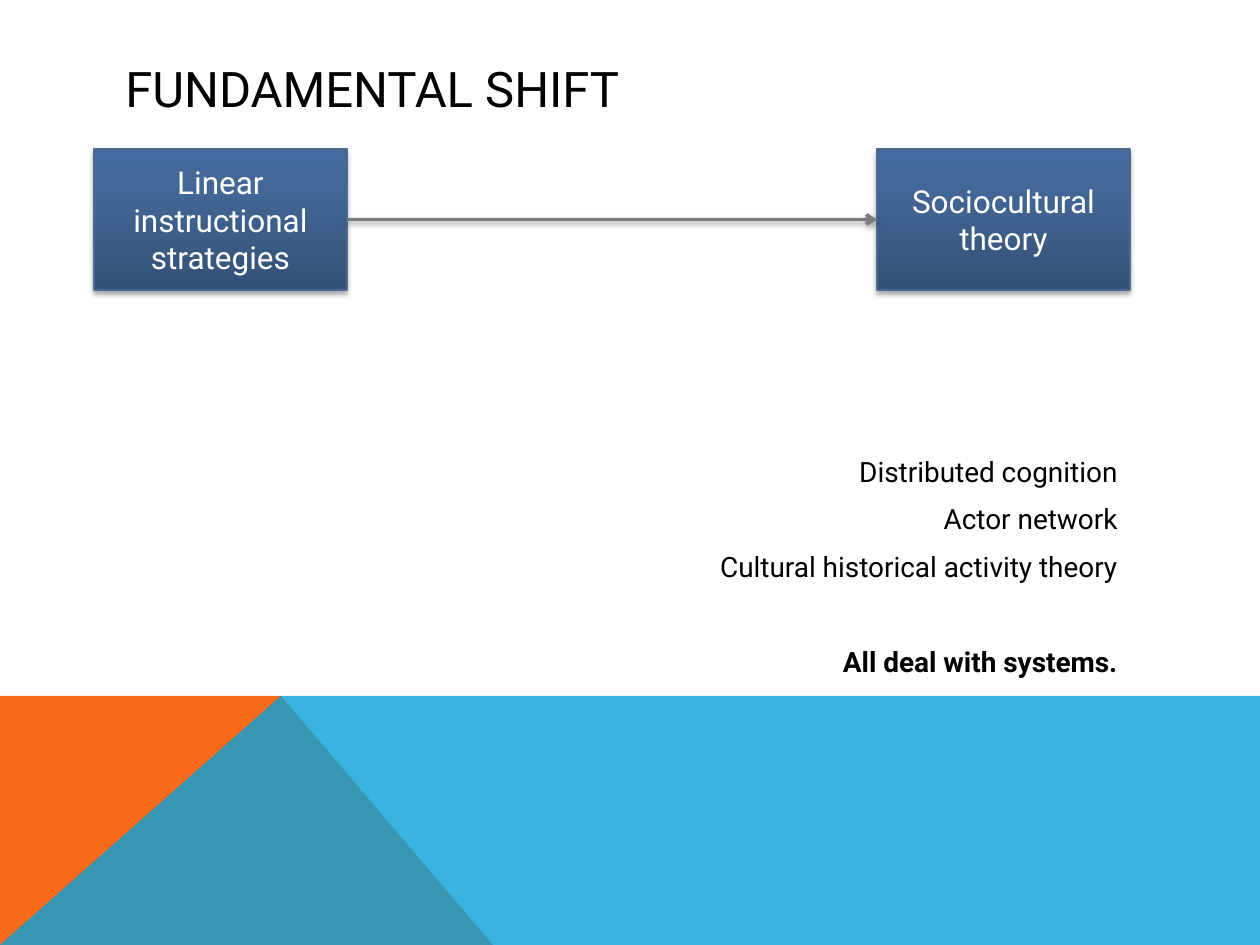
from lxml.etree import SubElement
from pptx import Presentation
from pptx.dml.color import RGBColor
from pptx.enum.shapes import MSO_CONNECTOR as Connector, MSO_SHAPE as Shape
from pptx.enum.text import MSO_ANCHOR as Anchor, PP_ALIGN as Align
from pptx.oxml.ns import qn
from pptx.util import Pt

SCALE = 914400 / 126
FONT = "Roboto"
GRADIENT = [(0, "345176"), (80, "446999"), (100, "426A9C")]


def px(length):
    """Turn whole pixels into EMU."""
    return round(length * SCALE)


def color(value):
    """Turn a hex string into a colour."""
    return RGBColor.from_string(value)


def add_color(parent, value, alpha=100):
    """Append a colour element with an opacity in percent."""
    node = SubElement(parent, qn("a:srgbClr"), val=value)
    SubElement(node, qn("a:alpha"), val=str(alpha * 1000))


def add_shadow(properties, alpha, distance):
    """Give shape properties a soft shadow that falls straight down."""
    effects = properties.find(qn("a:effectLst"))
    if effects is None:
        effects = SubElement(properties, qn("a:effectLst"))
    shadow = SubElement(effects, qn("a:outerShdw"), blurRad=str(Pt(3.1)),
                        dist=str(Pt(distance)), dir="5400000", rotWithShape="0")
    add_color(shadow, "000000", alpha)


def style_text(para, size, value, align=Align.LEFT):
    """Set the font and alignment of a paragraph."""
    para.alignment = align
    para.font.name = FONT
    para.font.size = Pt(size)
    para.font.color.rgb = color(value)


def add_band(page, points, value, alpha=100):
    """Draw a filled outline of the footer."""
    builder = page.shapes.build_freeform(*points[0], scale=SCALE)
    builder.add_line_segments(points[1:], close=True)
    band = builder.convert_to_shape()
    band.shadow.inherit = False
    band.line.fill.background()
    band.fill.solid()
    band.fill.fore_color.rgb = color(value)
    node = band.fill._xPr.find(qn("a:solidFill")).find(qn("a:srgbClr"))
    SubElement(node, qn("a:alpha"), val=str(alpha * 1000))


def add_text(page, left, top, width, height, lines, size, align, anchor):
    """Add a text box with one paragraph for each line."""
    box = page.shapes.add_textbox(px(left), px(top), px(width), px(height))
    frame = box.text_frame
    frame.word_wrap = True
    frame.vertical_anchor = anchor
    frame.text = "\n".join(lines)
    for para in frame.paragraphs:
        style_text(para, size, "000000", align)
    return frame.paragraphs


def add_theory(page, left, text):
    """Add a gradient box that names one approach."""
    box = page.shapes.add_shape(Shape.RECTANGLE, px(left), px(149), px(253), px(141))
    box.fill.gradient()
    box.fill.gradient_angle = 90
    stops = box._element.spPr.find(qn("a:gradFill")).find(qn("a:gsLst"))
    stops.clear()
    for position, value in GRADIENT:
        add_color(SubElement(stops, qn("a:gs"), pos=str(position * 1000)), value)
    box.line.color.rgb = color("4D6B92")
    box.line.width = Pt(0.75)
    box.shadow.inherit = False
    add_shadow(box._element.spPr, 35, 1.8)
    box.text_frame.word_wrap = True
    box.text_frame.vertical_anchor = Anchor.MIDDLE
    box.text_frame.text = text
    style_text(box.text_frame.paragraphs[0], 18, "FFFFFF", Align.CENTER)
    return box


def add_arrow(page, start, end):
    """Join two boxes with an arrow from left to right."""
    arrow = page.shapes.add_connector(Connector.STRAIGHT, 0, 0, 0, 0)
    arrow.begin_connect(start, 3)
    arrow.end_connect(end, 1)
    arrow.line.color.rgb = color("797B7E")
    arrow.line.width = Pt(2)
    SubElement(arrow.line._get_or_add_ln(), qn("a:tailEnd"), type="arrow")
    add_shadow(arrow._element.spPr, 38, 1.6)


def main():
    """Build the slide and save it."""
    deck = Presentation()
    deck.slide_width, deck.slide_height = px(1260), px(945)
    page = deck.slides.add_slide(deck.slide_layouts[6])

    add_band(page, [(0, 945), (0, 696), (281, 696), (493, 945)], "F96A1B")
    add_band(page, [(0, 945), (281, 696), (1260, 696), (1260, 945)], "08A1D9", 80)

    add_text(page, 113, 50, 1036, 76, ["FUNDAMENTAL SHIFT"], 28, Align.LEFT, Anchor.MIDDLE)
    theories = ["Distributed cognition", "Actor network",
                "Cultural historical activity theory", "All deal with systems."]
    paras = add_text(page, 94, 448, 1036, 253, theories, 16, Align.RIGHT, Anchor.TOP)
    for para in paras[1:]:
        para.space_before = Pt(8)
    paras[-1].space_before = Pt(35)
    paras[-1].font.bold = True

    linear = add_theory(page, 94, "Linear instructional strategies")
    sociocultural = add_theory(page, 877, "Sociocultural theory")
    add_arrow(page, linear, sociocultural)

    deck.save("out.pptx")


if __name__ == "__main__":
    main()
